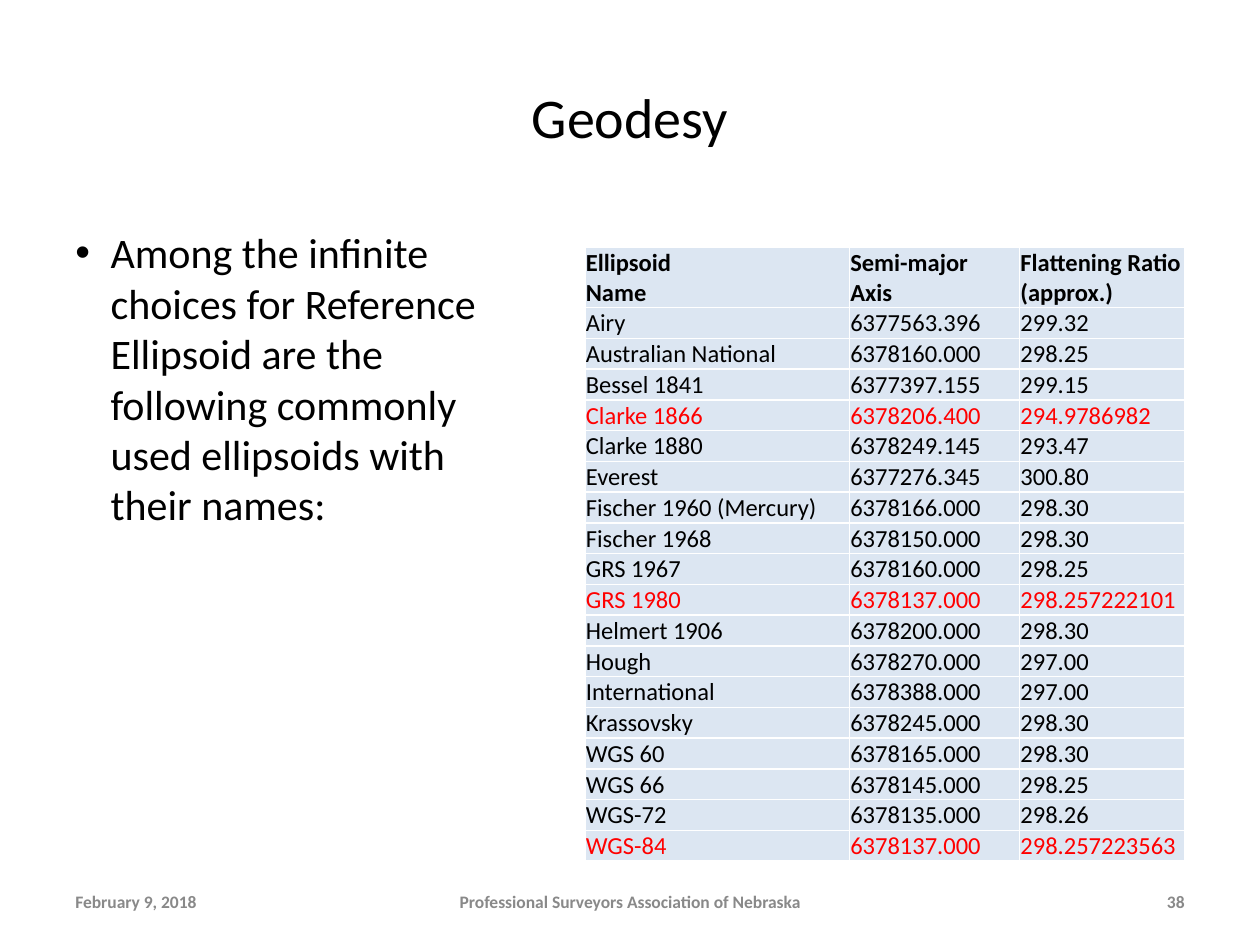
from lxml.etree import SubElement
from pptx import Presentation
from pptx.dml.color import RGBColor
from pptx.enum.text import MSO_ANCHOR, PP_ALIGN
from pptx.oxml.ns import qn
from pptx.util import Cm, Pt

BLACK, RED, GREY, WHITE, PALE_BLUE = "000000", "FF0000", "898989", "FFFFFF", "DCE6F2"

HEADERS = ["Ellipsoid\nName", "Semi-major\nAxis", "Flattening Ratio\n(approx.)"]
ELLIPSOIDS = [
    ("Airy", "6377563.396", "299.32"),
    ("Australian National", "6378160.000", "298.25"),
    ("Bessel 1841", "6377397.155", "299.15"),
    ("Clarke 1866", "6378206.400", "294.9786982"),
    ("Clarke 1880", "6378249.145", "293.47"),
    ("Everest", "6377276.345", "300.80"),
    ("Fischer 1960 (Mercury)", "6378166.000", "298.30"),
    ("Fischer 1968", "6378150.000", "298.30"),
    ("GRS 1967", "6378160.000", "298.25"),
    ("GRS 1980", "6378137.000", "298.257222101"),
    ("Helmert 1906", "6378200.000", "298.30"),
    ("Hough", "6378270.000", "297.00"),
    ("International", "6378388.000", "297.00"),
    ("Krassovsky", "6378245.000", "298.30"),
    ("WGS 60", "6378165.000", "298.30"),
    ("WGS 66", "6378145.000", "298.25"),
    ("WGS-72", "6378135.000", "298.26"),
    ("WGS-84", "6378137.000", "298.257223563"),
]
HIGHLIGHTED = {"Clarke 1866", "GRS 1980", "WGS-84"}


def color(hex_value):
    return RGBColor.from_string(hex_value)


class SlideBuilder:
    font = "Calibri"

    def __init__(self, slide):
        self.s = slide

    def fill_text(self, tf, text, size, hex_value=BLACK, bold=False, align=PP_ALIGN.LEFT):
        tf.text = text
        for p in tf.paragraphs:
            p.alignment = align
            for r in p.runs:
                r.font.name = self.font
                r.font.size = Pt(size)
                r.font.bold = bold
                r.font.color.rgb = color(hex_value)

    def title(self, text, left, top, width, height):
        sp = self.s.shapes.title
        sp.left, sp.top, sp.width, sp.height = Cm(left), Cm(top), Cm(width), Cm(height)
        sp.text_frame.vertical_anchor = MSO_ANCHOR.MIDDLE
        self.fill_text(sp.text_frame, text, 32, align=PP_ALIGN.CENTER)

    def text(self, text, left, top, width, height, size, anchor=MSO_ANCHOR.TOP, **style):
        sp = self.s.shapes.add_textbox(Cm(left), Cm(top), Cm(width), Cm(height))
        tf = sp.text_frame
        tf.word_wrap = True
        tf.vertical_anchor = anchor
        self.fill_text(tf, text, size, **style)
        return tf

    def bullet(self, text, *box, size, indent):
        tf = self.text(text, *box, size)
        pPr = tf.paragraphs[0]._p.get_or_add_pPr()
        pPr.set("marL", str(Cm(indent)))
        pPr.set("indent", str(-Cm(indent)))
        SubElement(pPr, qn("a:buFont"), typeface="Arial")
        SubElement(pPr, qn("a:buChar"), char="•")

    def cell(self, cell, text, hex_value, bold):
        cell.margin_left = cell.margin_right = cell.margin_top = Cm(0.02)
        cell.margin_bottom = 0
        cell.vertical_anchor = MSO_ANCHOR.BOTTOM
        self.fill_text(cell.text_frame, text, 14, hex_value, bold)
        # Borders come before the fill in the cell properties
        tcPr = cell._tc.get_or_add_tcPr()
        for side in ("lnL", "lnR", "lnT", "lnB"):
            line = SubElement(tcPr, qn(f"a:{side}"), w=str(Pt(1)))
            SubElement(SubElement(line, qn("a:solidFill")), qn("a:srgbClr"), val=WHITE)
        cell.fill.solid()
        cell.fill.fore_color.rgb = color(PALE_BLUE)

    def table(self, headers, records, left, top, widths, header_height, row_height):
        rows = [headers, *records]
        heights = [header_height] + [row_height] * len(records)
        table = self.s.shapes.add_table(
            len(rows), len(widths), Cm(left), Cm(top), Cm(sum(widths)), Cm(sum(heights))
        ).table
        for column, width in zip(table.columns, widths):
            column.width = Cm(width)
        for i, (row, height, values) in enumerate(zip(table.rows, heights, rows)):
            row.height = Cm(height)
            hex_value = RED if values[0] in HIGHLIGHTED else BLACK
            for cell, value in zip(row.cells, values):
                self.cell(cell, value, hex_value, bold=i == 0)


def main():
    prs = Presentation()
    prs.slide_width, prs.slide_height = Cm(25.4), Cm(19.05)
    b = SlideBuilder(prs.slides.add_slide(prs.slide_layouts[5]))

    # Title and introduction
    b.title("Geodesy", 1.27, 0.76, 22.86, 3.18)
    b.bullet(
        "Among the infinite choices for Reference Ellipsoid are the following "
        "commonly used ellipsoids with their names:",
        1.27, 4.45, 9.45, 12.57, size=24, indent=0.71,
    )

    # Ellipsoid parameters
    b.table(HEADERS, ELLIPSOIDS, 11.79, 4.98, [5.33, 3.43, 3.33], 1.22, 0.62)

    # Footer
    for text, left, width, align in [
        ("February 9, 2018", 1.27, 5.93, PP_ALIGN.LEFT),
        ("Professional Surveyors Association of Nebraska", 8.68, 8.04, PP_ALIGN.CENTER),
        ("38", 18.2, 5.93, PP_ALIGN.RIGHT),
    ]:
        b.text(text, left, 17.66, width, 1.01, 10, MSO_ANCHOR.MIDDLE,
               hex_value=GREY, bold=True, align=align)

    prs.save("out.pptx")


if __name__ == "__main__":
    main()
